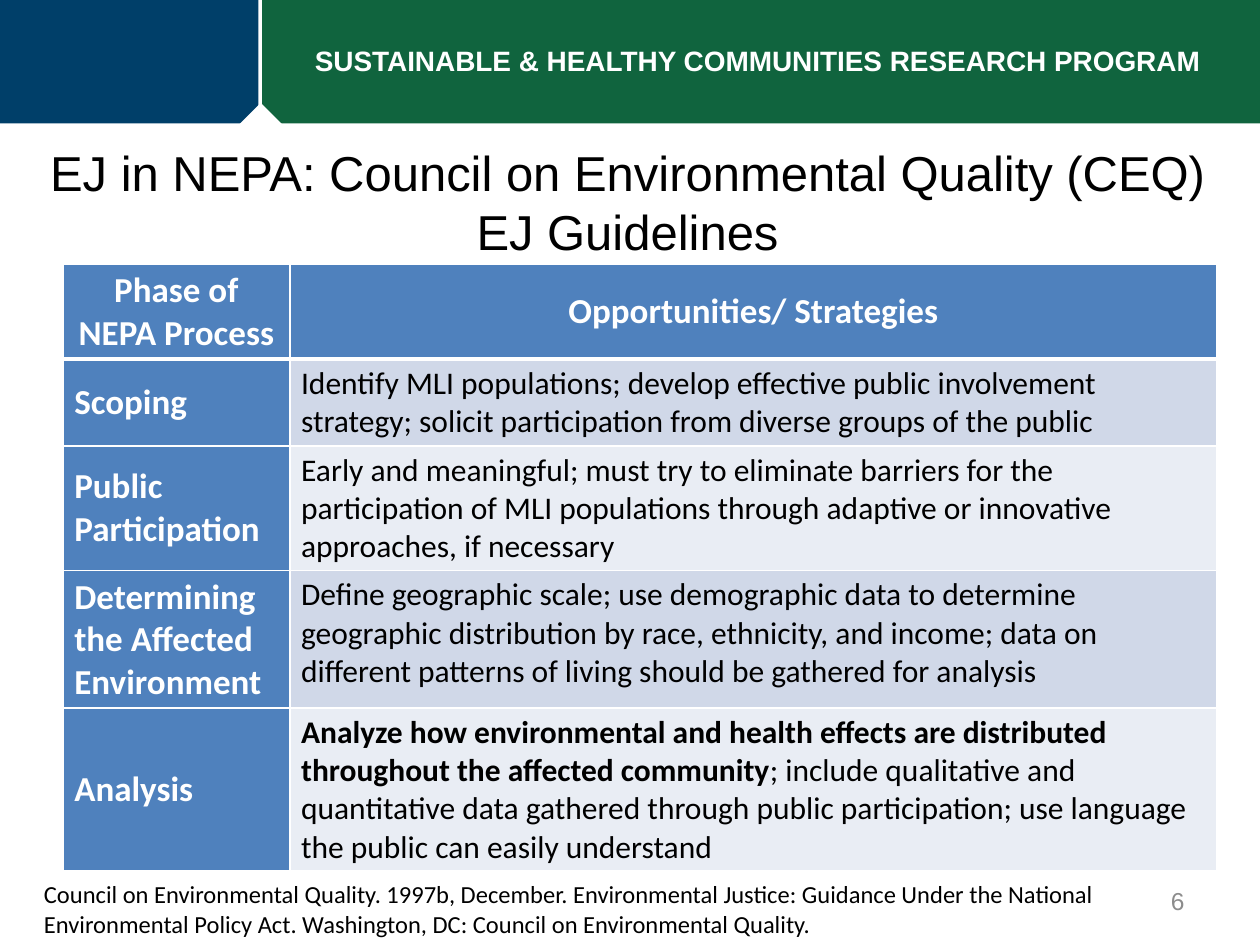
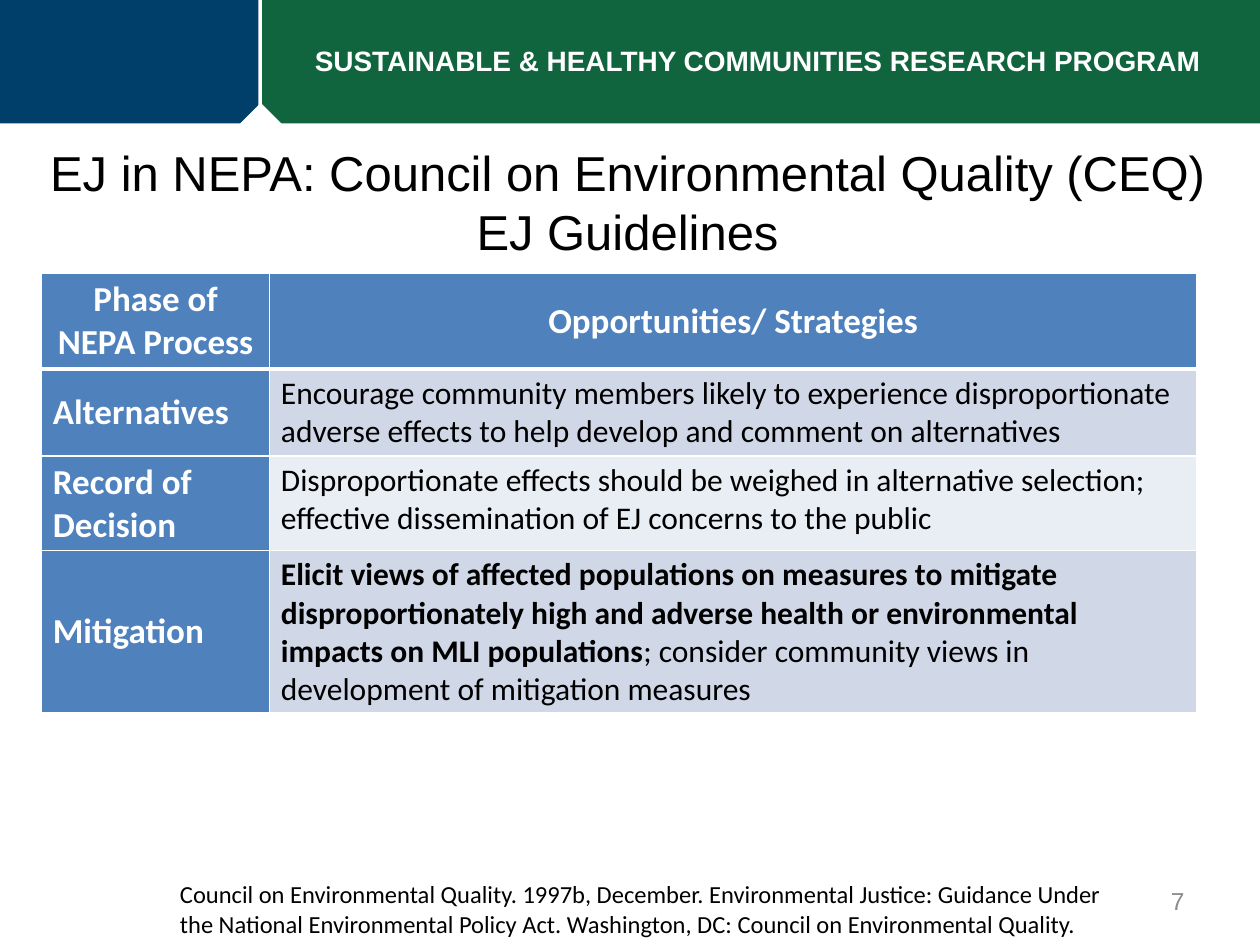
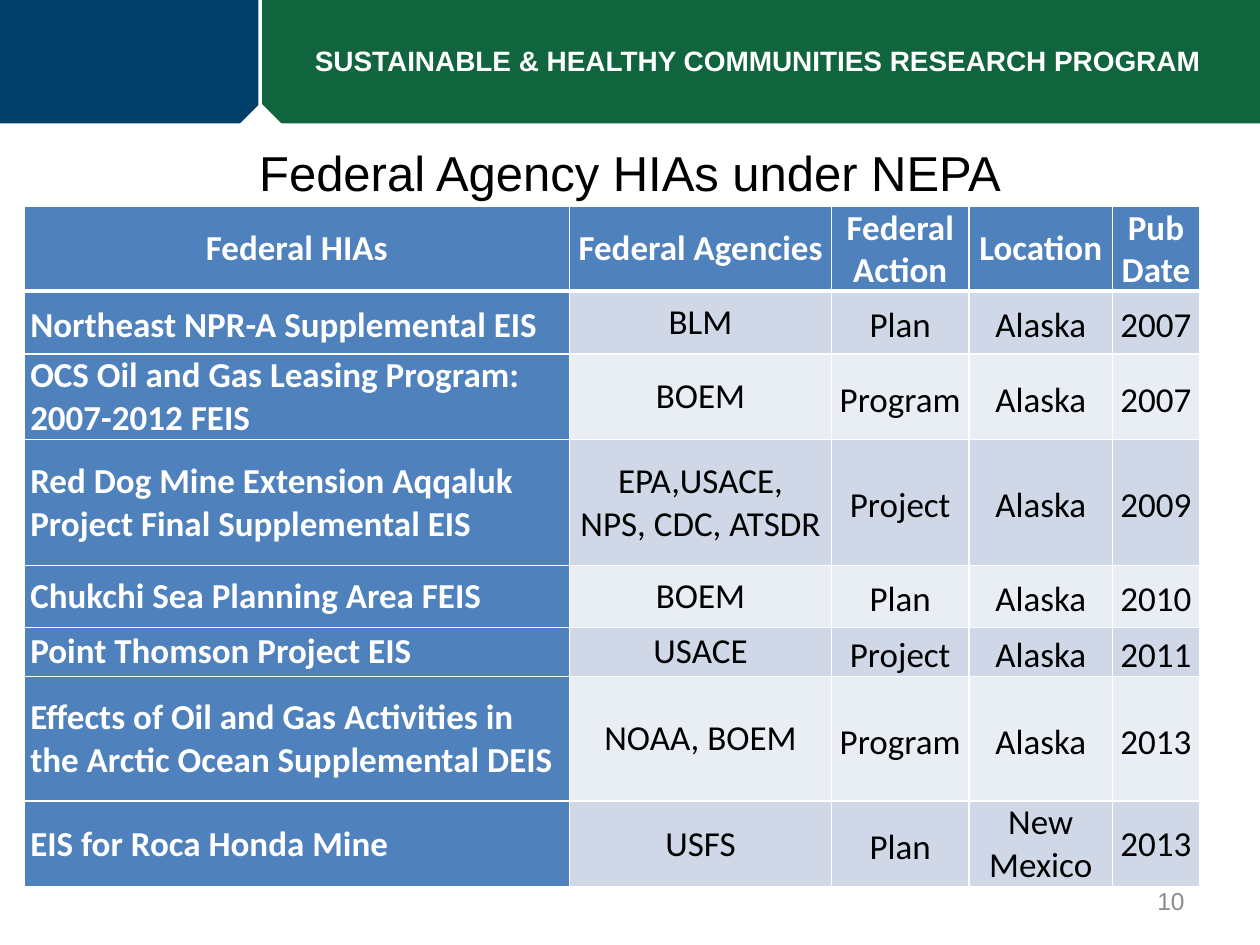
import pptx
import pptx.util
import pptx.dml.color
import pptx.enum.shapes
import pptx.enum.text
import pptx.oxml
import pptx.oxml.ns

# Content
BAND = "SUSTAINABLE & HEALTHY COMMUNITIES RESEARCH PROGRAM"
GUIDE = "EJ in NEPA: Council on Environmental Quality (CEQ) EJ Guidelines"
CITE = ("Council on Environmental Quality. 1997b, December. Environmental Justice: "
        "Guidance Under the National Environmental Policy Act. Washington, DC: "
        "Council on Environmental Quality.")
PHASE = ["Phase of NEPA Process", "Opportunities/ Strategies"]

# A tuple in a cell is (bold lead, plain rest)
EARLY = [
    PHASE,
    ["Scoping", "Identify MLI populations; develop effective public involvement "
     "strategy; solicit participation from diverse groups of the public"],
    ["Public Participation", "Early and meaningful; must try to eliminate barriers "
     "for the participation of MLI populations through adaptive or innovative "
     "approaches, if necessary"],
    ["Determining the Affected Environment", "Define geographic scale; use "
     "demographic data to determine geographic distribution by race, ethnicity, and "
     "income; data on different patterns of living should be gathered for analysis"],
    ["Analysis", ("Analyze how environmental and health effects are distributed "
                  "throughout the affected community",
                  "; include qualitative and quantitative data gathered through public "
                  "participation; use language the public can easily understand")],
]
LATE = [
    PHASE,
    ["Alternatives", "Encourage community members likely to experience "
     "disproportionate adverse effects to help develop and comment on alternatives"],
    ["Record of Decision", "Disproportionate effects should be weighed in alternative "
     "selection; effective dissemination of EJ concerns to the public"],
    ["Mitigation", ("Elicit views of affected populations on measures to mitigate "
                    "disproportionately high and adverse health or environmental "
                    "impacts on MLI populations",
                    "; consider community views in development of mitigation measures")],
]
CASES = [
    ["Federal HIAs", "Federal Agencies", "Federal Action", "Location", "Pub Date"],
    ["Northeast NPR-A Supplemental EIS", "BLM", "Plan", "Alaska", "2007"],
    ["OCS Oil and Gas Leasing Program: 2007-2012 FEIS", "BOEM", "Program", "Alaska",
     "2007"],
    ["Red Dog Mine Extension Aqqaluk Project Final Supplemental EIS",
     "EPA,USACE,\nNPS, CDC, ATSDR", "Project", "Alaska", "2009"],
    ["Chukchi Sea Planning Area FEIS", "BOEM", "Plan", "Alaska", "2010"],
    ["Point Thomson Project EIS", "USACE", "Project", "Alaska", "2011"],
    ["Effects of Oil and Gas Activities in the Arctic Ocean Supplemental DEIS",
     "NOAA, BOEM", "Program", "Alaska", "2013"],
    ["EIS for Roca Honda Mine", "USFS", "Plan", "New Mexico", "2013"],
]
# Cells of the case table with looser lines, as (row, column)
LOOSE = {(r, c) for r in range(1, 8) for c in (2, 3, 4)} | {(1, 0)}
LOOSE -= {(7, 3), (7, 4)}

PROSE = dict(size=18, pad=(0.09, 0.04), mid=False, loose=())
GRID = dict(size=20, pad=(0.05, 0), mid=True, loose=LOOSE)
SLIDES = [
    dict(title=GUIDE, box=(0.02, 1.08, 9.92, 0.58), num="6", cite=0.25,
         rows=EARLY, at=(0.5, 2.1), cols=[1.8, 7.36],
         highs=[0.75, 0.69, 0.99, 1.09, 1.29], style=PROSE),
    dict(title=GUIDE, box=(0.02, 1.08, 9.92, 0.58), num="7", cite=1.33,
         rows=LATE, at=(0.33, 2.17), cols=[1.81, 7.36],
         highs=[0.76, 0.69, 0.75, 1.29], style=PROSE),
    dict(title="Federal Agency HIAs under NEPA", box=(0.5, 1.08, 9, 0.55), num="10",
         cite=None, rows=CASES, at=(0.19, 1.64), cols=[4.33, 2.08, 1.09, 1.14, 0.69],
         highs=[0.67, 0.5, 0.68, 1, 0.49, 0.39, 0.99, 0.68], style=GRID),
]

# Shared look
HUES = dict(navy="003F69", green="10643E", white="FFFFFF", black="000000",
            gray="8C8C8C", head="4F81BD", odd="D0D8E8", even="E9EDF4")
ALIGN = pptx.enum.text.PP_ALIGN
ANCHOR = pptx.enum.text.MSO_ANCHOR
inch = pptx.util.Inches


def hue(name):
    return pptx.dml.color.RGBColor.from_string(HUES[name])


def write(para, text, size, color, face="Calibri", bold=False, align=ALIGN.LEFT):
    para.alignment = align
    run = para.add_run()
    run.text = text
    font = run.font
    font.size, font.name, font.bold = pptx.util.Pt(size), face, bold
    font.color.rgb = hue(color)


def block(slide, box, color, turn=0):
    shape = slide.shapes.add_shape(pptx.enum.shapes.MSO_SHAPE.RECTANGLE,
                                   *map(inch, box))
    shape.shadow.inherit = False
    shape.fill.solid()
    shape.fill.fore_color.rgb = hue(color)
    shape.line.fill.background()
    shape.rotation = turn


def label(slide, box, text, *look, wrap=True, mid=False, **more):
    frame = slide.shapes.add_textbox(*map(inch, box)).text_frame
    frame.word_wrap = wrap
    frame.vertical_anchor = ANCHOR.MIDDLE if mid else ANCHOR.TOP
    write(frame.paragraphs[0], text, *look, **more)


def edge(cell, side, width):
    line = pptx.oxml.parse_xml(
        f'<a:ln{side} {pptx.oxml.ns.nsdecls("a")} w="{width * 12700}"><a:solidFill>'
        f'<a:srgbClr val="{HUES["white"]}"/></a:solidFill></a:ln{side}>')
    cell._tc.get_or_add_tcPr().append(line)


def frame(slide):
    block(slide, (0, 0, 2.05, 0.98), "navy")
    block(slide, (2.08, 0, 7.92, 0.98), "green")
    label(slide, (2.4, 0.3, 7.35, 0.37), BAND, 16, "white", "Arial", bold=True,
          wrap=False)
    block(slide, (1.94, 0.87, 0.26, 0.26), "white", 315)


def head(slide, text, box):
    title = slide.shapes.title
    title.left, title.top, title.width, title.height = map(inch, box)
    body = title.text_frame
    body.word_wrap = True
    body.auto_size = pptx.enum.text.MSO_AUTO_SIZE.NONE
    body.vertical_anchor = ANCHOR.TOP
    write(body.paragraphs[0], text, 28, "black", "Arial", align=ALIGN.CENTER)


def fill(cell, text, r, c, style):
    top, lead = r == 0, r == 0 or c == 0
    # Thick rule under the header row
    for side in "LRTB":
        thick = (side, r) in (("B", 0), ("T", 1))
        edge(cell, side, 3 if thick else 1)
    cell.fill.solid()
    cell.fill.fore_color.rgb = hue("head" if lead else "odd" if r % 2 else "even")
    wide, tall = map(inch, style["pad"])
    cell.margin_left = cell.margin_right = wide
    cell.margin_top = cell.margin_bottom = tall
    cell.vertical_anchor = ANCHOR.MIDDLE if lead or style["mid"] else ANCHOR.TOP
    align = ALIGN.CENTER if top or (style["mid"] and c) else ALIGN.LEFT
    size, color = (20, "white") if lead else (style["size"], "black")

    bold, rest = text if isinstance(text, tuple) else (None, text)
    for i, part in enumerate(rest.split("\n")):
        para = cell.text_frame.add_paragraph() if i else cell.text_frame.paragraphs[0]
        if (r, c) in style["loose"]:
            para.line_spacing = 1.15
        if bold and not i:
            write(para, bold, size, color, bold=True, align=align)
        write(para, part, size, color, bold=lead, align=align)


def grid(slide, rows, at, cols, highs, style):
    box = (*at, sum(cols), sum(highs))
    table = slide.shapes.add_table(len(rows), len(cols), *map(inch, box)).table
    for col, width in zip(table.columns, cols):
        col.width = inch(width)
    for r, (row, high) in enumerate(zip(rows, highs)):
        table.rows[r].height = inch(high)
        for c, text in enumerate(row):
            fill(table.cell(r, c), text, r, c, style)


def main():
    deck = pptx.Presentation()
    deck.slide_width, deck.slide_height = inch(10), inch(7.5)
    for page in SLIDES:
        slide = deck.slides.add_slide(deck.slide_layouts[5])
        frame(slide)
        head(slide, page["title"], page["box"])
        label(slide, (7.17, 6.95, 2.33, 0.4), page["num"], 14, "gray", "Arial",
              align=ALIGN.RIGHT, mid=True)
        if page["cite"]:
            label(slide, (page["cite"], 6.93, 9 - page["cite"], 0.57), CITE, 14, "black")
        grid(slide, *(page[key] for key in ("rows", "at", "cols", "highs", "style")))
    deck.save("out.pptx")


if __name__ == "__main__":
    main()
